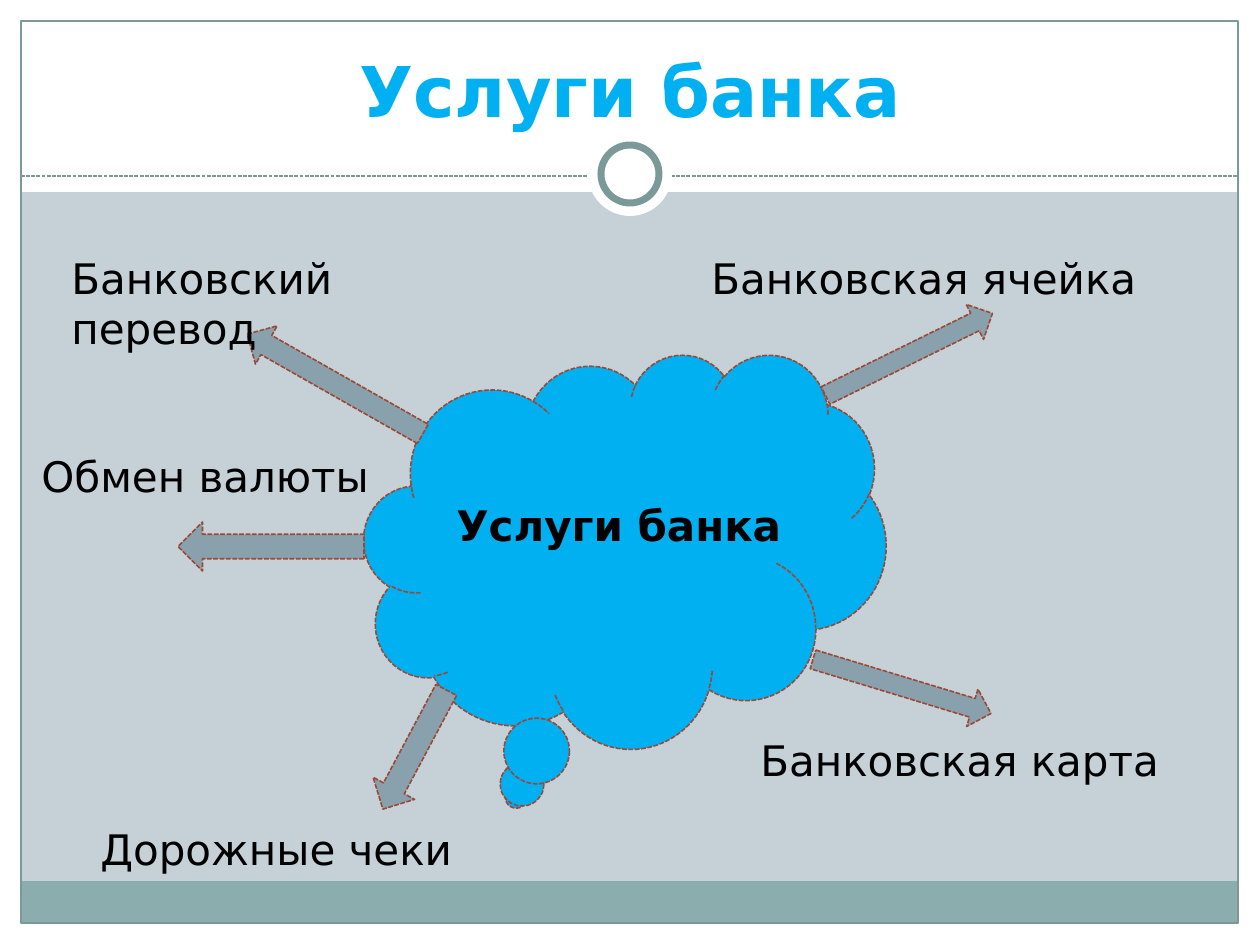
import pptx
import pptx.dml.color
import pptx.enum.dml
import pptx.enum.shapes
import pptx.enum.text
import pptx.oxml
import pptx.oxml.ns
import pptx.util

RGB = pptx.dml.color.RGBColor
KIND = pptx.enum.shapes.MSO_SHAPE
DASH = pptx.enum.dml.MSO_LINE.SQUARE_DOT

WHITE = RGB(0xFF, 0xFF, 0xFF)
BLACK = RGB(0x00, 0x00, 0x00)
PALE = RGB(0xC5, 0xD1, 0xD7)
TEAL = RGB(0x8C, 0xAD, 0xAE)
EDGE = RGB(0x7C, 0x99, 0x9A)
BLUE = RGB(0x00, 0xB0, 0xF0)
STEEL = RGB(0x88, 0xA1, 0xAD)
RUST = RGB(0x9B, 0x49, 0x36)


def px(count):
    return pptx.util.Emu(round(count * 914400 / 126))


class Page:
    font = "DejaVu Sans"

    def __init__(self, deck, back):
        self.slide = deck.slides.add_slide(deck.slide_layouts[5])
        self.slide.background.fill.solid()
        self.slide.background.fill.fore_color.rgb = back

    def stroke(self, line, color, width, dash=None):
        line.color.rgb = color
        line.width = pptx.util.Pt(width)
        if dash is not None:
            line.dash_style = dash

    def shape(self, kind, box, fill=None, line=None, turn=0):
        item = self.slide.shapes.add_shape(kind, *map(px, box))
        item.shadow.inherit = False
        item.rotation = turn
        if fill is None:
            item.fill.background()
        else:
            item.fill.solid()
            item.fill.fore_color.rgb = fill
        if line is None:
            item.line.fill.background()
        else:
            self.stroke(item.line, *line)

    def rule(self, left, right, top, *line):
        item = self.slide.shapes.add_connector(
            pptx.enum.shapes.MSO_CONNECTOR.STRAIGHT,
            px(left), px(top), px(right), px(top))
        self.stroke(item.line, *line)
        props = item.element.find(pptx.oxml.ns.qn("p:spPr"))
        props.append(pptx.oxml.parse_xml(
            f"<a:effectLst {pptx.oxml.ns.nsdecls('a')}/>"))

    def words(self, item, text, size, color, bold):
        item.text_frame.word_wrap = True
        para = item.text_frame.paragraphs[0]
        para.text = text
        para.font.name = self.font
        para.font.size = pptx.util.Pt(size)
        para.font.bold = bold
        para.font.color.rgb = color
        return para

    def label(self, text, left, top, width, bold=False):
        item = self.slide.shapes.add_textbox(*map(px, (left, top, width, 63)))
        self.words(item, text, 24, BLACK, bold)
        item.text_frame.auto_size = pptx.enum.text.MSO_AUTO_SIZE.SHAPE_TO_FIT_TEXT

    def title(self, text, box):
        item = self.slide.shapes.title
        item.left, item.top, item.width, item.height = map(px, box)
        para = self.words(item, text, 40, BLUE, True)
        para.alignment = pptx.enum.text.PP_ALIGN.CENTER
        item.text_frame.vertical_anchor = pptx.enum.text.MSO_ANCHOR.BOTTOM
        # Lift the title above the white header band
        item.element.getparent().append(item.element)


def main():
    deck = pptx.Presentation()
    deck.slide_width, deck.slide_height = px(1260), px(945)
    page = Page(deck, PALE)

    # White margins and header band
    for box in ((0, 924, 1260, 21), (0, 0, 1260, 192),
                (0, 0, 21, 945), (1239, 0, 21, 945)):
        page.shape(KIND.RECTANGLE, box, WHITE)

    # Footer bar, frame, dashed rule and ring
    page.shape(KIND.RECTANGLE, (21, 881, 1217, 43), TEAL)
    page.shape(KIND.RECTANGLE, (21, 21, 1217, 902), line=(EDGE, 0.75))
    page.rule(21, 1239, 176, EDGE, 0.75, DASH)
    page.shape(KIND.OVAL, (588, 132, 84, 84), WHITE)
    page.shape(KIND.OVAL, (601, 145, 58, 58), WHITE, (EDGE, 4))

    page.title("Услуги банка", (42, 32, 1176, 106))

    # Central cloud
    rim = (RUST, 0.9, DASH)
    page.shape(KIND.CLOUD_CALLOUT, (364, 354, 522, 394), BLUE, rim)
    page.label("Услуги банка", 444, 493, 413, bold=True)

    # Arrows out of the cloud
    for turn, *box in ((333.8, 816, 335, 186, 39),
                       (16.9, 809, 667, 186, 39),
                       (209.6, 234, 362, 202, 44),
                       (180, 178, 522, 186, 49),
                       (118, 347, 726, 135, 47)):
        page.shape(KIND.RIGHT_ARROW, box, STEEL, rim, turn)

    # Services
    for text, *spot in (("Банковский перевод", 59, 246, 483),
                        ("Банковская ячейка", 699, 246, 512),
                        ("Обмен валюты", 29, 444, 452),
                        ("Дорожные чеки", 88, 817, 581),
                        ("Банковская карта", 748, 728, 473)):
        page.label(text, *spot)

    deck.save("out.pptx")


if __name__ == "__main__":
    main()
